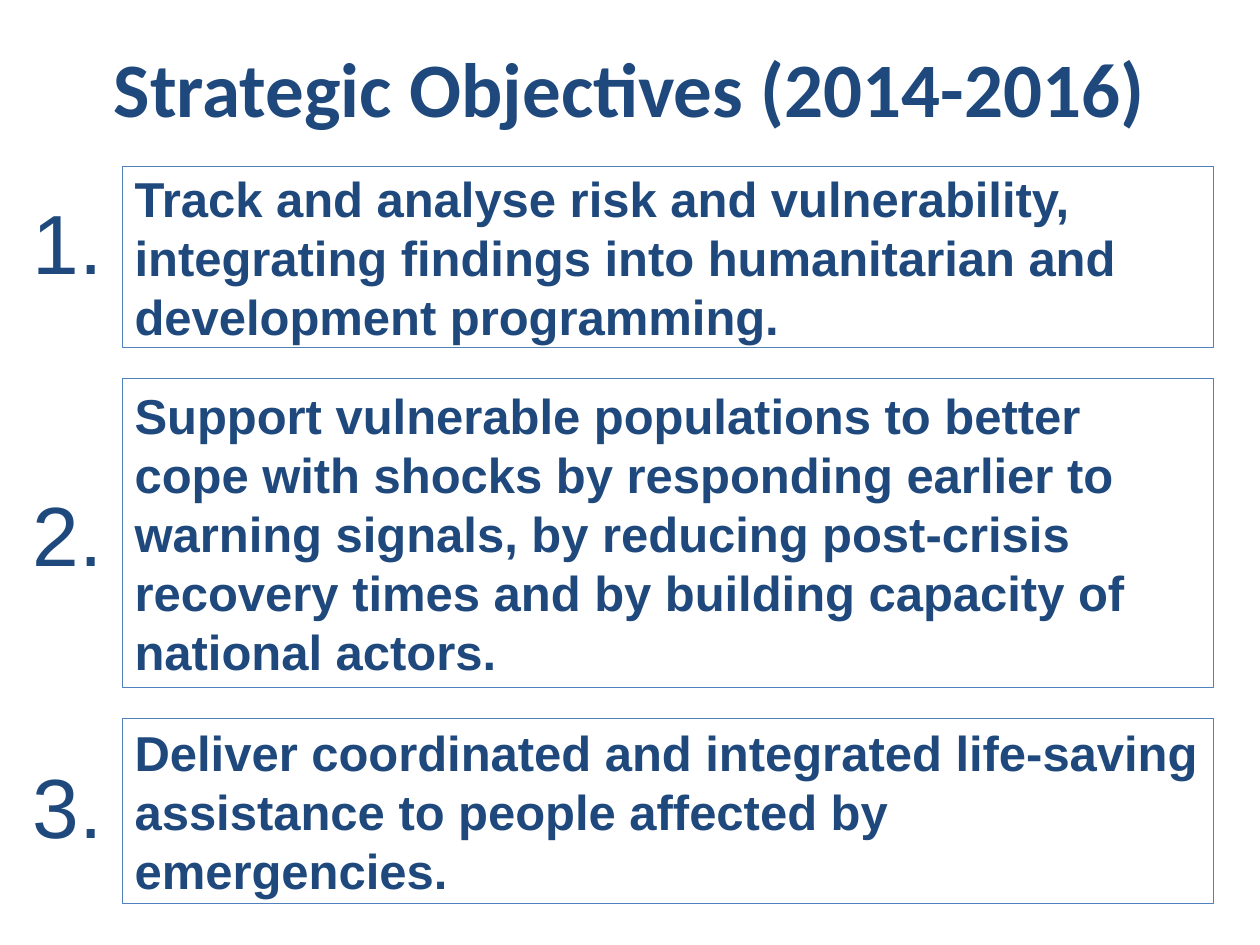
import pptx
import pptx.dml.color
import pptx.enum.shapes
import pptx.enum.text
import pptx.util
from dataclasses import dataclass

Inches = pptx.util.Inches
ALIGN = pptx.enum.text.PP_ALIGN
ANCHOR = pptx.enum.text.MSO_ANCHOR


@dataclass(frozen=True)
class Theme:
    ink: str = "1F497D"
    border: str = "4F81BD"
    border_width: float = 0.5
    title: tuple = ("Calibri", 44, True)
    objective: tuple = ("Arial", 28, True)
    number: tuple = ("Arial", 48, False)


THEME = Theme()
TITLE = "Strategic Objectives (2014-2016)"

# Columns: left, width
NUMBER_COLUMN = (0.16, 1.19)
BOX_COLUMN = (0.97, 8.66)
NUMBER_HEIGHT = 0.91

# Rows: box top, box height, number top, wording
OBJECTIVES = [
    (1.32, 1.44, 1.46,
     "Track and analyse risk and vulnerability, integrating findings into "
     "humanitarian and development programming."),
    (3.00, 2.46, 3.78,
     "Support vulnerable populations to better cope with shocks by responding "
     "earlier to warning signals, by reducing post-crisis recovery times and "
     "by building capacity of national actors."),
    (5.70, 1.47, 5.94,
     "Deliver coordinated and integrated life-saving assistance to people "
     "affected by emergencies."),
]


def color(value):
    return pptx.dml.color.RGBColor.from_string(value)


def write_text(shape, text, style, align, anchor):
    """Fill a shape with one paragraph in a theme style."""
    frame = shape.text_frame
    frame_format = {
        "word_wrap": True,
        "auto_size": pptx.enum.text.MSO_AUTO_SIZE.NONE,
        "vertical_anchor": anchor,
    }
    for name, value in frame_format.items():
        setattr(frame, name, value)
    paragraph = frame.paragraphs[0]
    paragraph.alignment = align
    run = paragraph.add_run()
    run.text = text
    family, size, bold = style
    font_format = {"name": family, "size": pptx.util.Pt(size), "bold": bold}
    for name, value in font_format.items():
        setattr(run.font, name, value)
    run.font.color.rgb = color(THEME.ink)


def add_title(slide):
    title = slide.shapes.title
    place = {"left": 0.5, "top": 0.3, "width": 9, "height": 0.78}
    for name, value in place.items():
        setattr(title, name, Inches(value))
    write_text(title, TITLE, THEME.title, ALIGN.CENTER, ANCHOR.MIDDLE)


def add_objective(slide, top, height, text):
    left, width = BOX_COLUMN
    box = slide.shapes.add_shape(
        pptx.enum.shapes.MSO_SHAPE.RECTANGLE,
        Inches(left), Inches(top), Inches(width), Inches(height))
    box.shadow.inherit = False
    box.fill.background()
    box.line.color.rgb = color(THEME.border)
    box.line.width = pptx.util.Pt(THEME.border_width)
    write_text(box, text, THEME.objective, ALIGN.LEFT, ANCHOR.MIDDLE)


def add_number(slide, top, number):
    left, width = NUMBER_COLUMN
    label = slide.shapes.add_textbox(
        Inches(left), Inches(top), Inches(width), Inches(NUMBER_HEIGHT))
    write_text(label, f"{number}.", THEME.number, ALIGN.LEFT, ANCHOR.TOP)


def main():
    presentation = pptx.Presentation()
    presentation.slide_width = Inches(10)
    presentation.slide_height = Inches(7.5)
    title_only = presentation.slide_layouts[5]
    slide = presentation.slides.add_slide(title_only)

    add_title(slide)
    # One numbered, outlined box per objective
    for number, (top, height, number_top, text) in enumerate(OBJECTIVES, 1):
        add_objective(slide, top, height, text)
        add_number(slide, number_top, number)

    presentation.save("out.pptx")


if __name__ == "__main__":
    main()
